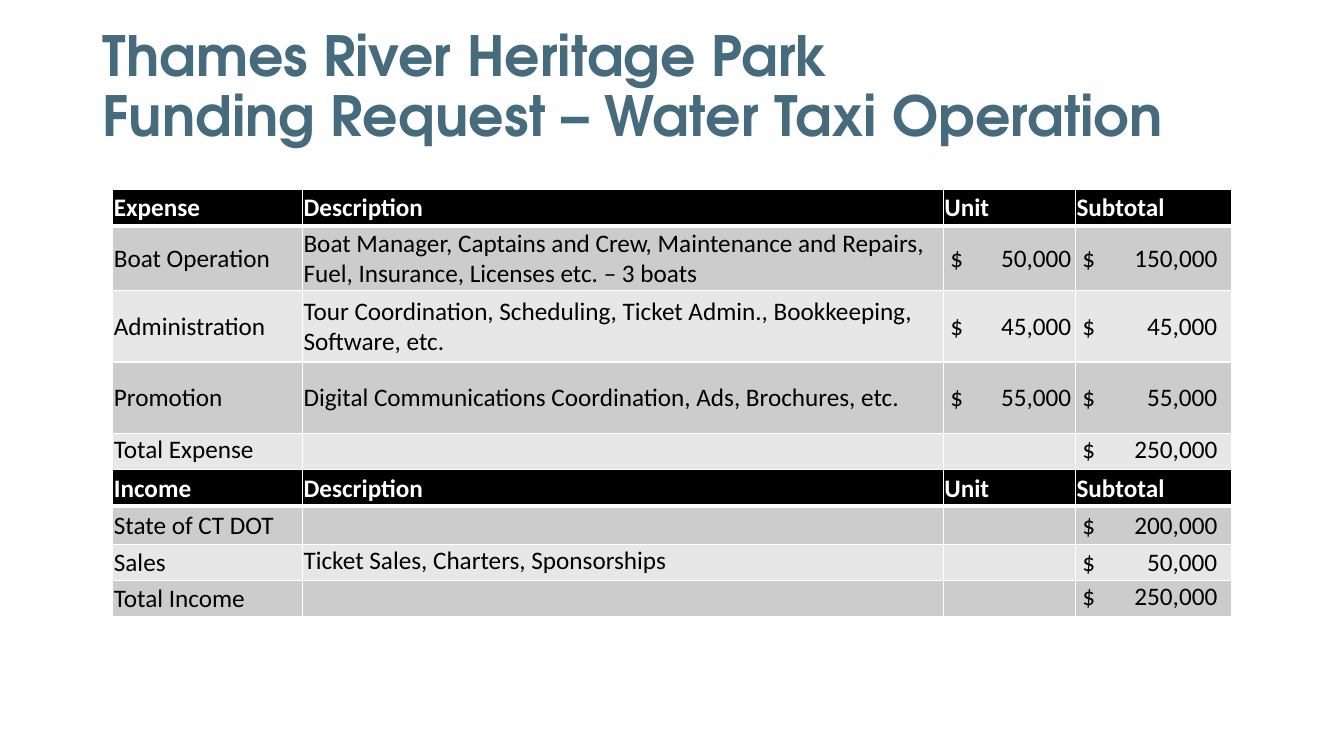
from lxml import etree
from pptx import Presentation
from pptx.dml.color import RGBColor
from pptx.enum import text
from pptx.oxml import ns
from pptx.util import Cm, Pt

WHITE = RGBColor(0xFF, 0xFF, 0xFF)
BLACK = RGBColor(0, 0, 0)
TEAL = RGBColor(0x45, 0x6B, 0x7D)
BANDS = (RGBColor(0xE7, 0xE7, 0xE7), RGBColor(0xCC, 0xCC, 0xCC))

COLUMN_WIDTHS = (4.78, 16.15, 3.33, 3.94)
AMOUNT_TABS = {2: 3.05, 3: 3.4}  # right tab of each money column, in cm

EXPENSES = [
    ("Expense", "Description", "Unit", "Subtotal"),
    ("Boat Operation",
     "Boat Manager, Captains and Crew, Maintenance and Repairs, "
     "Fuel, Insurance, Licenses etc. – 3 boats", "50,000", "150,000"),
    ("Administration",
     "Tour Coordination, Scheduling, Ticket Admin., Bookkeeping, Software, etc.",
     "45,000", "45,000"),
    ("Promotion", "Digital Communications Coordination, Ads, Brochures, etc.",
     "55,000", "55,000"),
    ("Total Expense", "", "", "250,000"),
]
INCOME = [
    ("Income", "Description", "Unit", "Subtotal"),
    ("State of CT DOT", "", "", "200,000"),
    ("Sales", "Ticket Sales, Charters, Sponsorships", "", "50,000"),
    ("Total Income", "", "", "250,000"),
]


class BudgetSlide:
    title_font = "TeX Gyre Adventor"
    body_font = "Calibri"

    def __init__(self, deck):
        self.page = deck.slides.add_slide(deck.slide_layouts[5])

    def add_span(self, para, words, font, size, color, bold):
        span = para.add_run()
        span.text = words
        span.font.name, span.font.size = font, Pt(size)
        span.font.color.rgb, span.font.bold = color, bold

    def title(self, lines, left, top, width, height):
        box = self.page.shapes.title
        box.left, box.top, box.width, box.height = map(Cm, (left, top, width, height))
        frame = box.text_frame
        frame.word_wrap = True
        frame.auto_size = text.MSO_AUTO_SIZE.NONE
        frame.vertical_anchor = text.MSO_ANCHOR.MIDDLE
        para = frame.paragraphs[0]
        para.alignment = text.PP_ALIGN.LEFT
        para.line_spacing = 0.9
        for index, line in enumerate(lines):
            if index:
                para.add_line_break()
            self.add_span(para, line, self.title_font, 39.6, TEAL, True)

    def borders(self, cell, bottom):
        props = cell._tc.get_or_add_tcPr()
        for side, points in (("L", 1), ("R", 1), ("T", 1), ("B", bottom)):
            line = etree.SubElement(props, ns.qn(f"a:ln{side}"), w=str(Pt(points)))
            fill = etree.SubElement(line, ns.qn("a:solidFill"))
            etree.SubElement(fill, ns.qn("a:srgbClr"), val=str(WHITE))

    def right_tab(self, para, position):
        tabs = etree.SubElement(para._p.get_or_add_pPr(), ns.qn("a:tabLst"))
        etree.SubElement(tabs, ns.qn("a:tab"), pos=str(Cm(position)), algn="r")

    def cell(self, cell, words, row, column, anchor):
        header = row == 0
        self.borders(cell, 3 if header else 1)
        cell.fill.solid()
        cell.fill.fore_color.rgb = BLACK if header else BANDS[row % 2]
        cell.margin_left = cell.margin_right = cell.margin_top = Cm(0.03)
        cell.margin_bottom = 0
        cell.vertical_anchor = anchor
        if not words:
            return
        para = cell.text_frame.paragraphs[0]
        if column in AMOUNT_TABS and not header:
            cell.margin_left = Cm(0.18)
            self.right_tab(para, AMOUNT_TABS[column])
            words = f"$\t{words}"
        self.add_span(para, words, self.body_font, 18, WHITE if header else BLACK, header)

    def table(self, rows, heights, left, top, top_cells):
        frame = self.page.shapes.add_table(
            len(rows), len(COLUMN_WIDTHS), Cm(left), Cm(top),
            Cm(sum(COLUMN_WIDTHS)), Cm(sum(heights)))
        table = frame.table
        table.first_row = table.horz_banding = False
        for column, width in zip(table.columns, COLUMN_WIDTHS):
            column.width = Cm(width)
        for r, (entries, height) in enumerate(zip(rows, heights)):
            table.rows[r].height = Cm(height)
            for c, words in enumerate(entries):
                anchor = text.MSO_ANCHOR.TOP if (r, c) in top_cells else text.MSO_ANCHOR.MIDDLE
                self.cell(table.cell(r, c), words, r, c, anchor)


def main():
    deck = Presentation()
    deck.slide_width, deck.slide_height = Cm(33.87), Cm(19.05)
    slide = BudgetSlide(deck)

    # Title
    slide.title(("Thames River Heritage Park", "Funding Request – Water Taxi Operation"),
                2.34, 0.38, 29.21, 3.68)

    # Expense and income tables
    slide.table(EXPENSES, (0.91, 1.63, 1.8, 1.8, 0.91), 2.84, 4.78, {(4, 0), (4, 3)})
    slide.table(INCOME, (0.91, 0.97, 0.91, 0.91), 2.84, 11.84, {(2, 1), (3, 3)})

    deck.save("out.pptx")


if __name__ == "__main__":
    main()
